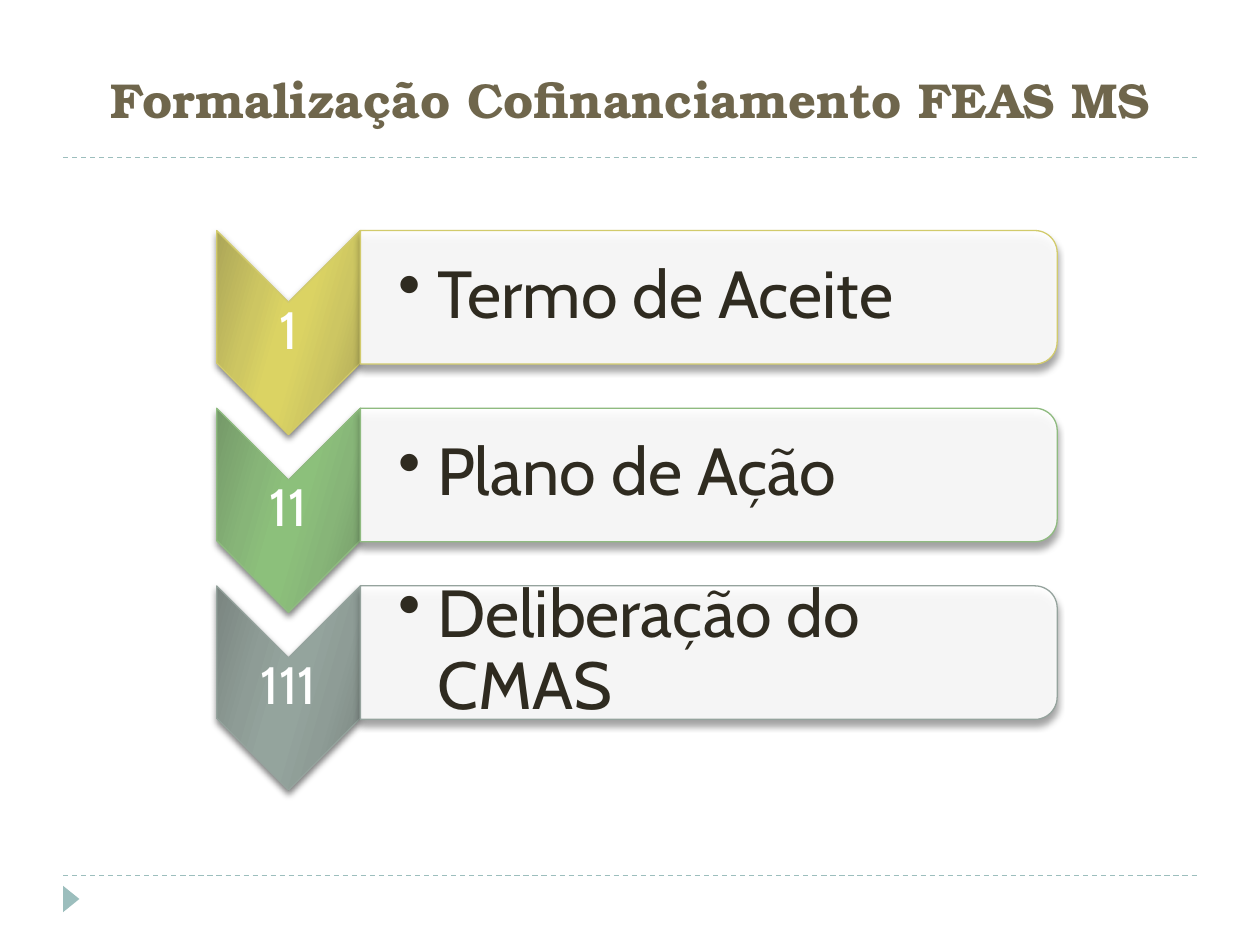
from dataclasses import dataclass

from lxml import etree
from pptx import Presentation
from pptx.dml.color import RGBColor
from pptx.enum.dml import MSO_LINE
from pptx.enum.shapes import MSO_CONNECTOR, MSO_SHAPE
from pptx.enum.text import MSO_ANCHOR, PP_ALIGN
from pptx.oxml import parse_xml
from pptx.oxml.ns import nsdecls, qn
from pptx.util import Inches, Pt

CENTER, LEFT = PP_ALIGN.CENTER, PP_ALIGN.LEFT
MIDDLE, BOTTOM = MSO_ANCHOR.MIDDLE, MSO_ANCHOR.BOTTOM
CHEVRON = MSO_SHAPE.CHEVRON
PANEL = MSO_SHAPE.ROUND_2_SAME_RECTANGLE
TRIANGLE = MSO_SHAPE.ISOSCELES_TRIANGLE
DASH, STRAIGHT = MSO_LINE.DASH, MSO_CONNECTOR.STRAIGHT

SLIDE_WIDTH, SLIDE_HEIGHT = Inches(10), Inches(7.5)
COLUMN, ROW = SLIDE_WIDTH / 100, SLIDE_HEIGHT / 75  # grid cells

ACCENT = "9CBEBD"
BODY_FONT, TITLE_FONT = "Cabin", "TeX Gyre Bonum"
STEP_TOP, STEP_PITCH = 18.3, 14.1
CHEVRON_LEFT, CHEVRON_WIDTH, CHEVRON_HEIGHT = 17.2, 11.4, 16.2
PANEL_LEFT, PANEL_WIDTH, PANEL_HEIGHT = 28.6, 55.3, 10.6


@dataclass(frozen=True)
class Box:
    """A rectangle as it shows, in grid columns and rows."""
    left: float
    top: float
    width: float
    height: float


@dataclass(frozen=True)
class TextStyle:
    font: str
    size: float
    color: str
    align: PP_ALIGN = CENTER
    anchor: MSO_ANCHOR = MIDDLE
    bold: bool = False
    line_spacing: float = 0.9
    inset: float = 0.2
    left_inset: float = 0.2


@dataclass(frozen=True)
class Step:
    number: str
    label: str
    outline: str
    edge: str
    shade: str
    core: str


TITLE_STYLE = TextStyle(TITLE_FONT, 28, "6F664C", anchor=BOTTOM, bold=True,
                        line_spacing=1, inset=0.5, left_inset=0.5)
NUMBER_STYLE = TextStyle(BODY_FONT, 30, "FFFFFF")
LABEL_STYLE = TextStyle(BODY_FONT, 38, "2F2B20", align=LEFT,
                        inset=0.3, left_inset=3)

STEPS = [
    Step("1", "Termo de Aceite", "D2CB6C", "ACA658", "CDC662", "DBD363"),
    Step("11", "Plano de Ação", "8FBB80", "759969", "87B578", "8CC07B"),
    Step("111", "Deliberação do CMAS", "95A39D", "7A8580", "8E9C96", "94A49D"),
]


def color(value: str) -> RGBColor:
    return RGBColor.from_string(value)


def add_turned_shape(slide, kind, box: Box, fill: str):
    """Add a shape turned by 90 degrees that covers the box once turned."""
    width, height = box.height * ROW, box.width * COLUMN
    middle_x = (box.left + box.width / 2) * COLUMN
    middle_y = (box.top + box.height / 2) * ROW
    shape = slide.shapes.add_shape(
        kind, round(middle_x - width / 2), round(middle_y - height / 2),
        round(width), round(height))
    shape.rotation = 90
    shape.shadow.inherit = False
    shape.fill.solid()
    shape.fill.fore_color.rgb = color(fill)
    shape.line.fill.background()
    return shape


def set_outline(shape, value: str) -> None:
    shape.line.color.rgb = color(value)
    shape.line.width = Pt(0.75)


def set_shadow(shape, distance: float, opacity: int) -> None:
    effects = shape._element.spPr.find(qn("a:effectLst"))
    effects.append(parse_xml(
        f'<a:outerShdw {nsdecls("a")} blurRad="{Pt(4)}" dist="{Pt(distance)}" '
        f'dir="5400000" rotWithShape="0"><a:srgbClr val="000000">'
        f'<a:alpha val="{opacity * 1000}"/></a:srgbClr></a:outerShdw>'))


def set_gradient(shape, step: Step) -> None:
    stops = zip((0, 30, 45, 55, 73, 100),
                (step.edge, step.shade, step.core, step.core, step.shade, step.edge))
    stop_xml = "".join(f'<a:gs pos="{position * 1000}"><a:srgbClr val="{value}"/></a:gs>'
                       for position, value in stops)
    gradient = parse_xml(
        f'<a:gradFill {nsdecls("a")} rotWithShape="0"><a:gsLst>{stop_xml}</a:gsLst>'
        f'<a:lin ang="{16 * 60000}" scaled="0"/></a:gradFill>')
    properties = shape._element.spPr
    properties.replace(properties.find(qn("a:solidFill")), gradient)


def set_opacity(shape, percent: int) -> None:
    fill_color = shape._element.spPr.find(qn("a:solidFill"))[0]
    etree.SubElement(fill_color, qn("a:alpha")).set("val", str(percent * 1000))


def add_text(slide, box: Box, text: str, style: TextStyle):
    text_box = slide.shapes.add_textbox(
        round(box.left * COLUMN), round(box.top * ROW),
        round(box.width * COLUMN), round(box.height * ROW))
    frame = text_box.text_frame
    frame.word_wrap = True
    frame.vertical_anchor = style.anchor
    frame.margin_left = round(style.left_inset * COLUMN)
    frame.margin_right = round(style.inset * COLUMN)
    frame.margin_top = frame.margin_bottom = round(style.inset * ROW)
    paragraph = frame.paragraphs[0]
    paragraph.alignment = style.align
    paragraph.line_spacing = style.line_spacing
    run = paragraph.add_run()
    run.text = text
    run.font.name = style.font
    run.font.size = Pt(style.size)
    run.font.bold = style.bold
    run.font.color.rgb = color(style.color)
    return paragraph


def add_bullet(paragraph) -> None:
    properties = paragraph._p.get_or_add_pPr()
    properties.set("marL", str(Inches(0.31)))
    properties.set("indent", str(-Inches(0.31)))
    etree.SubElement(properties, qn("a:buChar")).set("char", "•")


def add_rule(slide, row: float) -> None:
    """Add a dashed line across the slide between its side margins."""
    rule = slide.shapes.add_connector(
        STRAIGHT, round(5 * COLUMN), round(row * ROW),
        round(95 * COLUMN), round(row * ROW))
    set_outline(rule, ACCENT)
    rule.line.dash_style = DASH
    etree.SubElement(rule._element.spPr, qn("a:effectLst"))


def add_step(slide, step: Step, top: float) -> None:
    chevron = add_turned_shape(
        slide, CHEVRON, Box(CHEVRON_LEFT, top, CHEVRON_WIDTH, CHEVRON_HEIGHT), step.core)
    set_gradient(chevron, step)
    set_outline(chevron, step.outline)
    set_shadow(chevron, 2, 50)
    add_text(slide, Box(CHEVRON_LEFT, top + 5.6, CHEVRON_WIDTH, 4.9),
             step.number, NUMBER_STYLE)

    panel = add_turned_shape(
        slide, PANEL, Box(PANEL_LEFT, top, PANEL_WIDTH, PANEL_HEIGHT), "FFFFFF")
    set_opacity(panel, 90)
    set_outline(panel, step.outline)
    set_shadow(panel, 3.4, 40)
    label = add_text(slide, Box(PANEL_LEFT, top + 0.5, PANEL_WIDTH - 0.5, PANEL_HEIGHT - 1.1),
                     step.label, LABEL_STYLE)
    add_bullet(label)


def main() -> None:
    presentation = Presentation()
    presentation.slide_width, presentation.slide_height = SLIDE_WIDTH, SLIDE_HEIGHT
    slide = presentation.slides.add_slide(presentation.slide_layouts[6])
    for row in (69.5, 12.5):
        add_rule(slide, row)
    add_turned_shape(slide, TRIANGLE, Box(5, 70.3, 1.3, 2.1), ACCENT)
    add_text(slide, Box(5, 3, 90, 7.7), "Formalização Cofinanciamento FEAS MS", TITLE_STYLE)
    for index, step in enumerate(STEPS):
        add_step(slide, step, STEP_TOP + index * STEP_PITCH)
    presentation.save("out.pptx")


if __name__ == "__main__":
    main()
